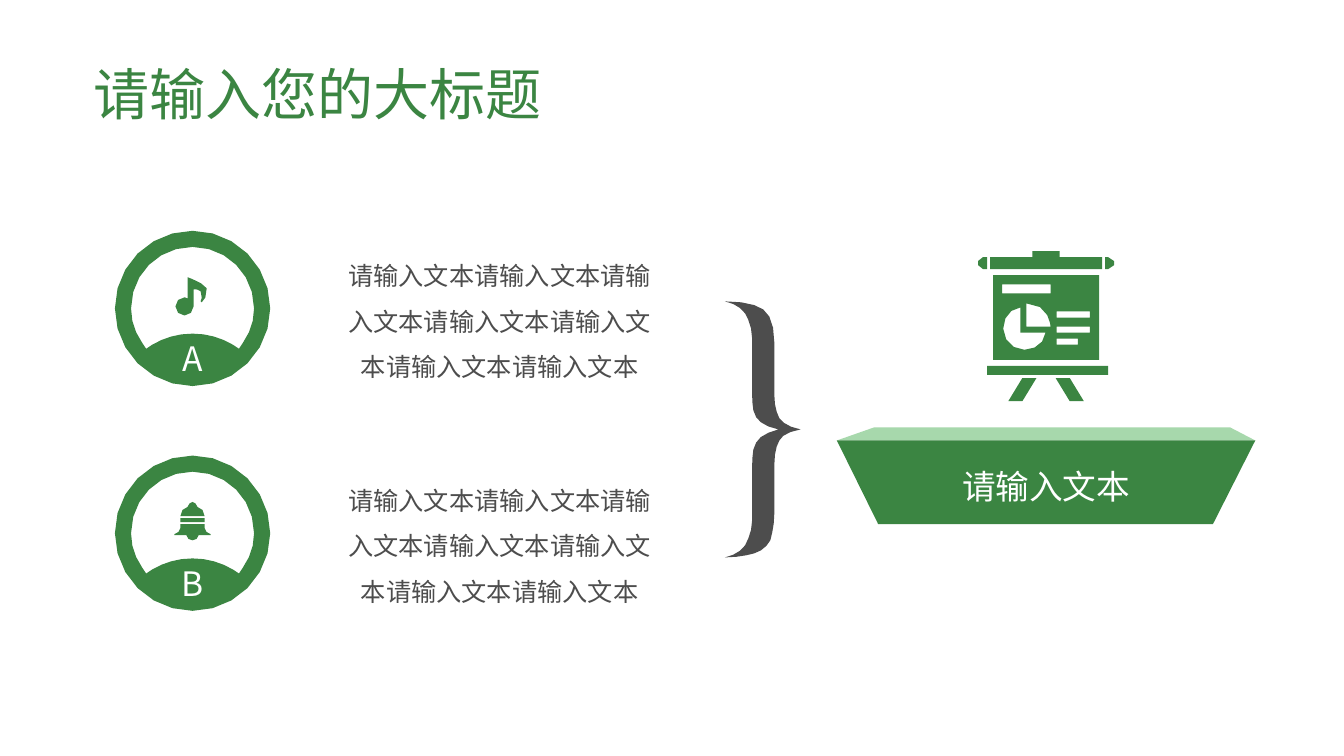
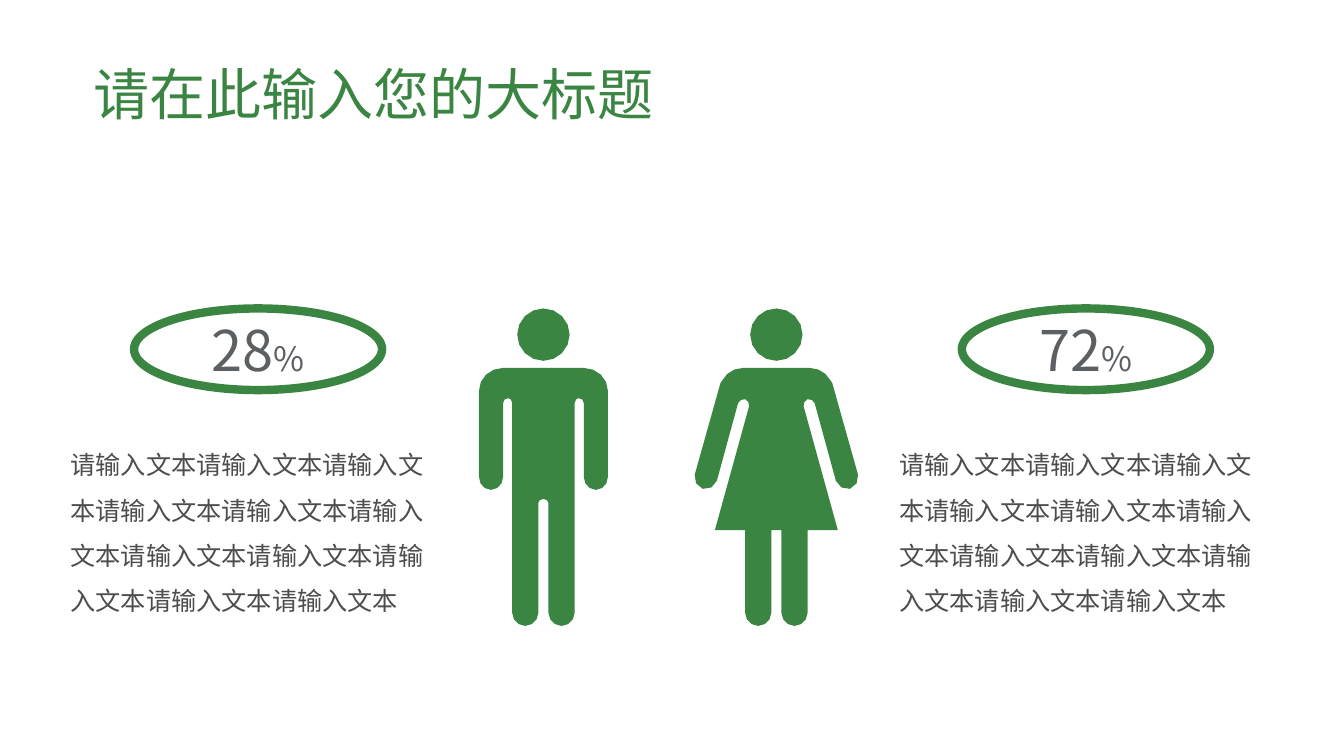
import math
from dataclasses import dataclass

import pptx
import pptx.dml.color
import pptx.enum.shapes
import pptx.enum.text
import pptx.oxml.ns
import pptx.util
from lxml import etree

Inches = pptx.util.Inches
Align = pptx.enum.text.PP_ALIGN
Anchor = pptx.enum.text.MSO_ANCHOR
Point = tuple[float, float]
Contour = list[Point]

# Shared look
FONT = "Noto Sans CJK SC"
GREEN, MINT, DARK, GRAY, WHITE = "3B8542", "A7D8AC", "4D4D4D", "5D6063", "FFFFFF"
TITLE_BOX = (0.83, 0.41, 11.19, 0.91)
SAMPLE = "请输入文本"


def rgb(color: str) -> pptx.dml.color.RGBColor:
    return pptx.dml.color.RGBColor.from_string(color)


# Text
def style_run(r, size: float, color: str) -> None:
    r.font.size = pptx.util.Pt(size)
    r.font.name = FONT
    r.font.color.rgb = rgb(color)
    ea = etree.SubElement(r._r.get_or_add_rPr(), pptx.oxml.ns.qn("a:ea"))
    ea.set("typeface", FONT)


def write(sp, text: str, size: float, color: str, align=Align.LEFT,
          anchor=Anchor.MIDDLE, spacing: float = 1.0):
    tf = sp.text_frame
    tf.word_wrap = True
    tf.auto_size = pptx.enum.text.MSO_AUTO_SIZE.NONE
    tf.vertical_anchor = anchor
    p = tf.paragraphs[0]
    p.text = text
    p.alignment = align
    p.line_spacing = spacing
    style_run(p.runs[0], size, color)
    return tf


def add_text(s, box: tuple, text: str, align=Align.LEFT) -> None:
    sp = s.shapes.add_textbox(*map(Inches, box))
    write(sp, text, 18, DARK, align, spacing=1.5)


def add_titled_slide(prs, title: str):
    s = prs.slides.add_slide(prs.slide_layouts[5])
    sp = s.shapes.title
    sp.left, sp.top, sp.width, sp.height = map(Inches, TITLE_BOX)
    write(sp, title, 40, GREEN, anchor=Anchor.BOTTOM, spacing=0.9)
    return s


# Outlines
def curve_steps(length: float) -> int:
    """Use just enough segments for a curve to look smooth."""
    return max(2, round(math.sqrt(30 * length)))


def bezier(a: Point, b: Point, c: Point, d: Point) -> Contour:
    steps = curve_steps(math.dist(a, b) + math.dist(b, c) + math.dist(c, d))
    points = []
    for i in range(1, steps + 1):
        t = i / steps
        u = 1 - t
        weights = (u ** 3, 3 * u * u * t, 3 * u * t * t, t ** 3)
        points.append(tuple(sum(w * q[k] for w, q in zip(weights, (a, b, c, d)))
                            for k in (0, 1)))
    return points


def trace(path: str) -> Contour:
    """Turn L (line) and C (cubic curve) commands into points."""
    points, numbers, command = [], [], "L"
    for token in path.split():
        if token.isalpha():
            command = token
            continue
        numbers.append(float(token))
        if len(numbers) == (6 if command == "C" else 2):
            pairs = list(zip(numbers[::2], numbers[1::2]))
            points += bezier(points[-1], *pairs) if command == "C" else pairs
            numbers = []
    return points


def mirrored(center: float, half: str) -> Contour:
    """Complete a right half, given as offsets from the center line."""
    right = trace(half)
    left = [(-x, y) for x, y in reversed(right) if x]
    return [(center + x, y) for x, y in right + left]


def circle(cx: float, cy: float, radius: float) -> Contour:
    steps = 4 * curve_steps(math.pi / 2 * radius)
    angles = (2 * math.pi * i / steps for i in range(steps))
    return [(cx + radius * math.cos(a), cy + radius * math.sin(a)) for a in angles]


def rect(left: float, top: float, right: float, bottom: float) -> Contour:
    return [(left, top), (right, top), (right, bottom), (left, bottom)]


def add_outline(s, contours: list[Contour], color: str = GREEN, dy: float = 0):
    builder = None
    for contour in contours:
        points = [(Inches(x), Inches(y + dy)) for x, y in contour]
        if builder is None:
            builder = s.shapes.build_freeform(*points[0], scale=1.0)
        else:
            builder.move_to(*points[0])
        builder.add_line_segments(points[1:], close=True)
    sp = builder.convert_to_shape()
    sp.shadow.inherit = False
    sp.fill.solid()
    sp.fill.fore_color.rgb = rgb(color)
    sp.line.fill.background()
    return sp


# Slide 1 parts
BADGE_X, BADGE_STEP = 1.91, 2.23
BADGE = [
    circle(BADGE_X, 3.06, 0.77),
    mirrored(BADGE_X, "0 2.45 C .34 2.45 .61 2.72 .61 3.06 .61 3.19 .57 3.3 .5 3.4 "
                      "L .46 3.46 .4 3.42 C .28 3.35 .15 3.31 0 3.31"),
]
NOTE = [trace("1.83 2.95 C 1.84 2.95 1.85 2.96 1.86 2.96 L 1.86 2.75 "
              "C 1.86 2.75 2.03 2.81 2.05 2.86 2.08 2.92 2 3 2 3 L 1.99 2.99 "
              "C 1.99 2.99 2.02 2.93 1.99 2.89 1.97 2.87 1.94 2.87 1.92 2.87 "
              "L 1.92 3.04 C 1.92 3.09 1.88 3.13 1.83 3.13 "
              "1.78 3.13 1.74 3.09 1.74 3.04 1.74 2.99 1.78 2.95 1.83 2.95")]
BELL = [
    mirrored(BADGE_X, "0 4.98 C .02 4.98 .04 5 .05 5.03 .09 5.04 .12 5.07 .12 5.12"),
    rect(1.79, 5.14, 2.03, 5.18),
    mirrored(BADGE_X, ".12 5.2 .12 5.24 C .12 5.27 .15 5.29 .18 5.3 "
                      "L .18 5.31 .06 5.31 C .06 5.34 .03 5.36 0 5.36"),
]
BRACE = [trace("7.46 3.36 C 7.46 3.25 7.42 3.16 7.39 3.11 7.35 3.05 7.28 3.01 7.19 2.99 "
               "7.37 2.99 7.5 3.02 7.57 3.07 7.64 3.12 7.68 3.23 7.68 3.4 L 7.68 3.92 "
               "C 7.68 4.02 7.7 4.09 7.73 4.15 7.77 4.2 7.83 4.24 7.94 4.26 "
               "7.83 4.28 7.75 4.32 7.73 4.37 7.7 4.42 7.68 4.5 7.68 4.61 L 7.68 5.09 "
               "C 7.68 5.2 7.66 5.29 7.64 5.36 7.61 5.42 7.55 5.47 7.48 5.49 "
               "7.41 5.51 7.31 5.53 7.19 5.53 7.28 5.51 7.35 5.47 7.39 5.41 "
               "7.42 5.35 7.46 5.27 7.46 5.16 L 7.46 4.67 "
               "C 7.46 4.54 7.46 4.45 7.5 4.39 7.53 4.33 7.61 4.29 7.72 4.26 "
               "7.61 4.24 7.53 4.19 7.5 4.14 7.46 4.08 7.46 3.99 7.46 3.88")]
BANNER_TOP = [trace("8.67 4.24 12.2 4.24 12.45 4.37 8.3 4.37")]
BANNER = [trace("8.3 4.37 12.45 4.37 12.03 5.2 8.71 5.2")]
SCREEN = [
    # Roller with its end caps
    trace("10.99 2.67 10.96 2.67 10.96 2.55 10.99 2.55 11.05 2.59 11.05 2.63"),
    trace("9.82 2.55 10.24 2.55 10.24 2.49 10.51 2.49 10.51 2.55 10.93 2.55 "
          "10.93 2.67 9.82 2.67"),
    trace("9.7 2.63 9.7 2.59 9.75 2.55 9.79 2.55 9.79 2.67 9.75 2.67"),
    # Board with cut-out heading, text lines and pie
    rect(9.85, 2.73, 10.9, 3.57),
    rect(9.94, 2.82, 10.42, 2.91),
    rect(10.48, 3.09, 10.81, 3.15),
    rect(10.48, 3.24, 10.81, 3.3),
    rect(10.48, 3.36, 10.69, 3.42),
    trace("10.16 3.47 C 10.27 3.47 10.36 3.4 10.37 3.3 L 10.12 3.3 10.12 3.05 "
          "C 10.02 3.06 9.95 3.15 9.95 3.26 9.95 3.38 10.05 3.47 10.16 3.47"),
    trace("10.42 3.24 C 10.42 3.24 10.41 3.01 10.18 3.01 L 10.18 3.24"),
    # Base bar and legs
    rect(9.79, 3.63, 10.99, 3.72),
    trace("10.28 3.75 10.14 3.98 10 3.98 10.14 3.75"),
    trace("10.75 3.98 10.61 3.98 10.47 3.75 10.61 3.75"),
]


@dataclass
class Item:
    letter: str
    icon: list[Contour]


def add_item(s, item: Item, dy: float) -> None:
    sp = add_outline(s, BADGE, dy=dy)
    tf = write(sp, item.letter, 24, WHITE, Align.CENTER, Anchor.BOTTOM)
    tf.margin_bottom = Inches(0.08)
    add_text(s, (3.26, 2.37 + dy, 3.39, 1.48), SAMPLE * 7, Align.CENTER)
    add_outline(s, item.icon)


def build_summary(prs) -> None:
    s = add_titled_slide(prs, "请输入您的大标题")
    for i, item in enumerate([Item("A", NOTE), Item("B", BELL)]):
        add_item(s, item, i * BADGE_STEP)
    add_outline(s, BRACE, DARK)
    add_outline(s, BANNER_TOP, MINT)
    sp = add_outline(s, BANNER)
    write(sp, SAMPLE, 24, WHITE, Align.CENTER, spacing=1.2)
    add_outline(s, SCREEN)


# Slide 2 parts
MAN = ("0 3.65 L .4 3.65 C .53 3.65 .64 3.75 .64 3.88 L .64 4.73 "
       "C .64 4.8 .59 4.86 .52 4.86 .45 4.86 .4 4.8 .4 4.73 L .4 4 "
       "C .4 3.97 .38 3.95 .35 3.95 .33 3.95 .31 3.97 .31 4 L .31 6.08 "
       "C .31 6.15 .25 6.21 .18 6.21 .11 6.21 .05 6.15 .05 6.08 L .05 4.99 "
       "C .05 4.97 .03 4.95 0 4.95")
WOMAN = ("0 3.65 L .33 3.65 C .42 3.65 .5 3.7 .54 3.78 .55 3.79 .56 3.81 .56 3.82 "
         "L .81 4.71 C .82 4.77 .79 4.83 .73 4.85 .67 4.86 .61 4.83 .59 4.77 L .38 4 "
         "C .37 3.97 .34 3.96 .31 3.96 .28 3.97 .27 4 .27 4.03 L .61 5.26 .31 5.26 "
         ".31 6.08 C .31 6.15 .25 6.21 .18 6.21 .11 6.21 .05 6.15 .05 6.08 L .05 5.26")


@dataclass
class Share:
    value: str
    text_left: float
    ring_left: float
    center: float
    body: str


def add_share(s, share: Share) -> None:
    add_text(s, (share.text_left, 4.21, 3.91, 2), SAMPLE * 11)
    # Ring with the percentage
    box = (share.ring_left, 3.06, 2.46, 0.81)
    sp = s.shapes.add_shape(pptx.enum.shapes.MSO_SHAPE.OVAL, *map(Inches, box))
    sp.shadow.inherit = False
    sp.fill.solid()
    sp.fill.fore_color.rgb = rgb(WHITE)
    sp.line.color.rgb = rgb(GREEN)
    sp.line.width = pptx.util.Pt(6)
    tf = write(sp, share.value, 40, GRAY, Align.CENTER)
    r = tf.paragraphs[0].add_run()
    r.text = "%"
    style_run(r, 24, GRAY)
    # Figure
    add_outline(s, [mirrored(share.center, share.body),
                    circle(share.center, 3.32, 0.26)])


def build_shares(prs) -> None:
    s = add_titled_slide(prs, "请在此输入您的大标题")
    for share in (Share("28", 0.6, 1.33, 5.39, MAN),
                  Share("72", 8.82, 9.54, 7.7, WOMAN)):
        add_share(s, share)


def main() -> None:
    prs = pptx.Presentation()
    prs.slide_width, prs.slide_height = Inches(13.33), Inches(7.5)
    build_summary(prs)
    build_shares(prs)
    prs.save("out.pptx")


if __name__ == "__main__":
    main()
